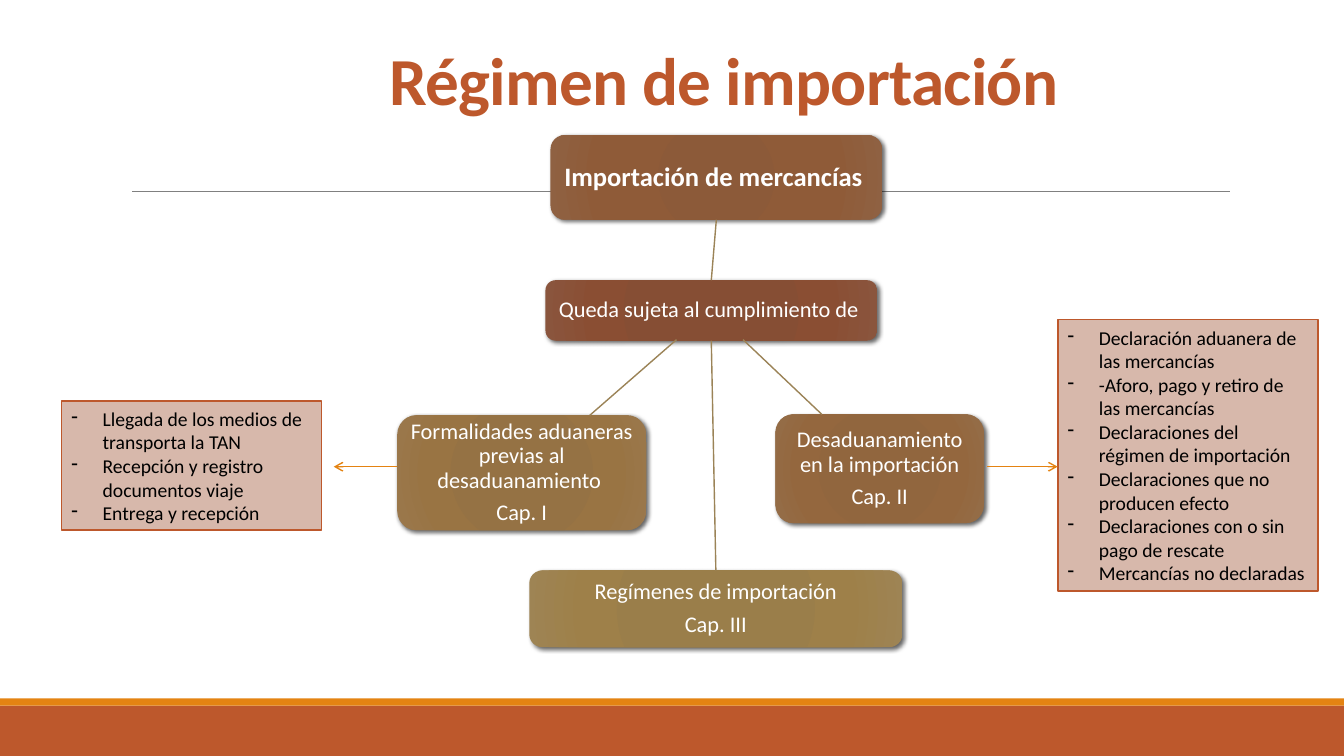
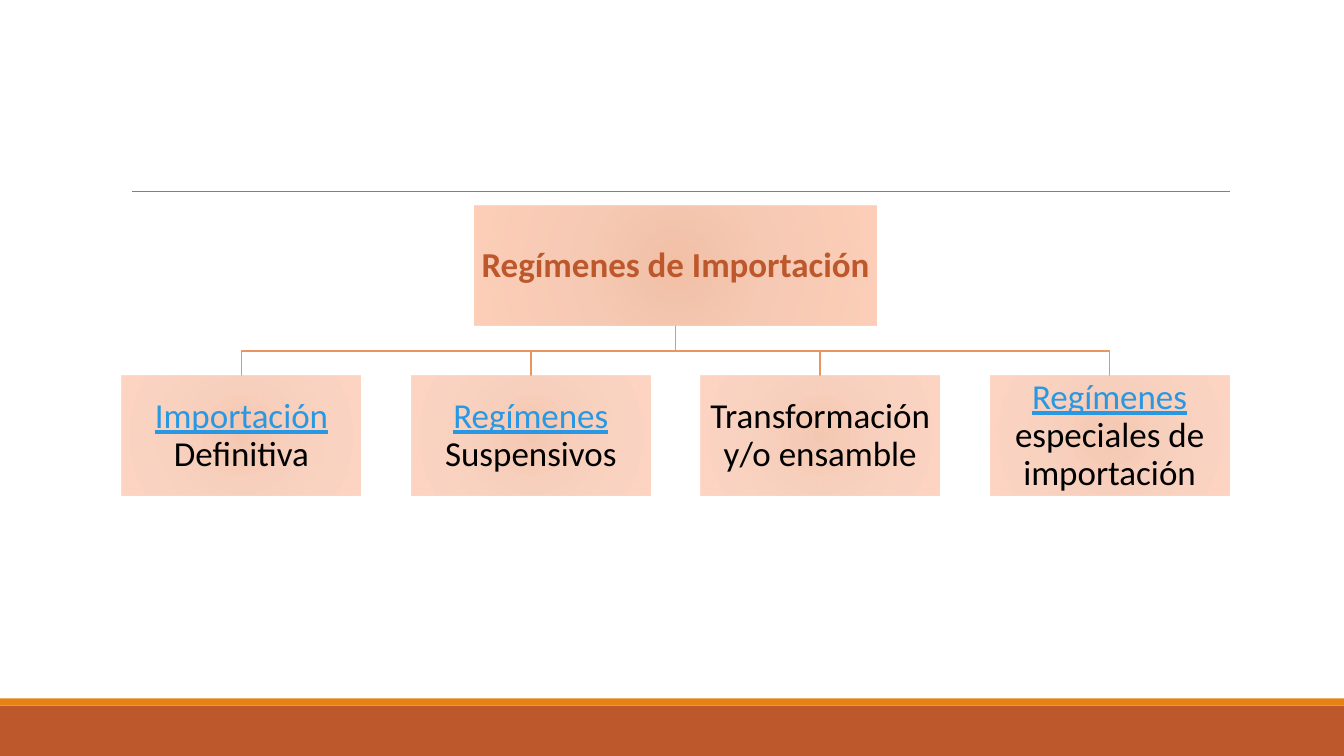
import pptx
import pptx.util
import pptx.oxml
import pptx.oxml.ns
import pptx.dml.color
import pptx.enum.shapes
import pptx.enum.text

Inches = pptx.util.Inches
Pt = pptx.util.Pt
SHAPE = pptx.enum.shapes.MSO_SHAPE
ALIGN = pptx.enum.text.PP_ALIGN
ANCHOR = pptx.enum.text.MSO_ANCHOR
DRAWING_NS = pptx.oxml.ns.nsdecls("a")

FONT = "Calibri"
COLORS = {
    "rust": "BD582C",
    "orange": "E48312",
    "rule": "808080",
    "branch": "9B8357",
    "tree": "E7965F",
    "note": "D7B8AB",
    "link": "2998E3",
    "white": "FFFFFF",
    "black": "000000",
}
# Gradient stops: (position in percent, colour)
STEP_POSITIONS = (0, 34, 70, 100)
STEP_GRADIENTS = {
    "goods": ("8C5937", "8C5A39", "8F5B38", "8F6142"),
    "subject": ("874C32", "864E34", "8A4E33", "8A553D"),
    "clearance": ("91653C", "91663E", "94673E", "946D48"),
    "formalities": ("957142", "957244", "997443", "9A784D"),
    "regimes": ("9A7D48", "9A7E4A", "9E8049", "9E8454"),
}
PEACH_STOPS = ((0, "F0B191"), (45, "F5BEA4"), (100, "FDC3A8"))


def rgb(name):
    return pptx.dml.color.RGBColor.from_string(COLORS[name])


# Text: each paragraph is a string or a list of (text, run format) pairs
def write(shape, paragraphs, size=16, color="white", bold=False,
          align=ALIGN.CENTER, anchor=ANCHOR.MIDDLE, inset=(0.1, 0.05),
          line_spacing=None, gap=0, bullet=None, tracking=None):
    frame = shape.text_frame
    frame.word_wrap = True
    frame.vertical_anchor = anchor
    frame.margin_left = frame.margin_right = Inches(inset[0])
    frame.margin_top = frame.margin_bottom = Inches(inset[1])
    for index, content in enumerate(paragraphs):
        paragraph = frame.add_paragraph() if index else frame.paragraphs[0]
        paragraph.alignment = align
        paragraph.line_spacing = line_spacing
        if index and gap:
            paragraph.space_before = Pt(gap)
        if bullet:
            add_bullet(paragraph, bullet)
        runs = [(content, {})] if isinstance(content, str) else content
        for words, style in runs:
            run = paragraph.add_run()
            run.text = words
            run.font.name = FONT
            run.font.size = Pt(size)
            run.font.bold = bold
            run.font.underline = style.get("underline", False)
            run.font.color.rgb = rgb(style.get("color", color))
            if tracking:
                run._r.get_or_add_rPr().set("spc", str(int(tracking * 100)))


def add_bullet(paragraph, mark, indent=0.31):
    properties = paragraph._p.get_or_add_pPr()
    properties.set("marL", str(Inches(indent)))
    properties.set("indent", str(-Inches(indent)))
    properties.append(pptx.oxml.parse_xml(
        f'<a:buChar {DRAWING_NS} char="{mark}"/>'))


# Shapes
def add_box(slide, at, fill=None, line=None, kind=SHAPE.RECTANGLE):
    box = slide.shapes.add_shape(kind, *map(Inches, at))
    box.shadow.inherit = False
    if fill:
        box.fill.solid()
        box.fill.fore_color.rgb = rgb(fill)
    else:
        box.fill.background()
    if line:
        box.line.color.rgb = rgb(line)
        box.line.width = Pt(1.25)
    else:
        box.line.fill.background()
    return box


def set_radial_fill(box, stops, opacity=100):
    stop_xml = "".join(
        f'<a:gs pos="{position * 1000}"><a:srgbClr val="{color}">'
        f'<a:alpha val="{opacity * 1000}"/></a:srgbClr></a:gs>'
        for position, color in stops)
    gradient = pptx.oxml.parse_xml(
        f'<a:gradFill {DRAWING_NS} rotWithShape="1"><a:gsLst>{stop_xml}</a:gsLst>'
        '<a:path path="circle"><a:fillToRect l="100000" t="100000" r="100000" '
        'b="100000"/></a:path></a:gradFill>')
    properties = box._element.spPr
    properties.replace(properties.find(pptx.oxml.ns.qn("a:noFill")), gradient)


def set_drop_shadow(box):
    effects = box._element.spPr.find(pptx.oxml.ns.qn("a:effectLst"))
    effects.append(pptx.oxml.parse_xml(
        f'<a:outerShdw {DRAWING_NS} blurRad="{Pt(3)}" dist="{Pt(2)}" '
        'dir="2700000" algn="ctr" rotWithShape="0"><a:srgbClr val="000000">'
        '<a:alpha val="60000"/></a:srgbClr></a:outerShdw>'))


def add_step(slide, at, gradient, paragraphs, **style):
    step = add_box(slide, at, kind=SHAPE.ROUNDED_RECTANGLE)
    set_radial_fill(step, zip(STEP_POSITIONS, STEP_GRADIENTS[gradient]))
    set_drop_shadow(step)
    write(step, paragraphs, inset=(0.04, 0.04), line_spacing=0.9, gap=5.6, **style)
    return step


def add_note(slide, at, items):
    note = add_box(slide, at, fill="note", line="rust")
    write(note, items, size=14, color="black", align=ALIGN.LEFT, bullet="-")


def add_regime(slide, at, runs, opacity, **style):
    regime = add_box(slide, at)
    set_radial_fill(regime, PEACH_STOPS, opacity)
    write(regime, [runs], size=25, inset=(0.02, 0.02), line_spacing=0.9, **style)


# Lines
def add_line(slide, start, end, color, width, arrow=False, source=None, target=None):
    line = slide.shapes.add_connector(
        pptx.enum.shapes.MSO_CONNECTOR.STRAIGHT, *map(Inches, (*start, *end)))
    if source:
        line.begin_connect(source, 2)
    if target:
        line.end_connect(target, 0)
    line.line.color.rgb = rgb(color)
    line.line.width = Pt(width)
    if arrow:
        line.line._get_or_add_ln().append(
            pptx.oxml.parse_xml(f'<a:tailEnd {DRAWING_NS} type="arrow"/>'))
    line._element.spPr.append(pptx.oxml.parse_xml(f"<a:effectLst {DRAWING_NS}/>"))


def add_elbow(slide, start, end):
    (start_x, start_y), (end_x, end_y) = start, end
    bend_y = (start_y + end_y) / 2
    outline = slide.shapes.build_freeform(
        Inches(start_x), Inches(start_y))
    corners = ((start_x, bend_y), (end_x, bend_y), (end_x, end_y))
    outline.add_line_segments(
        [(Inches(x), Inches(y)) for x, y in corners], close=False)
    elbow = outline.convert_to_shape()
    elbow.shadow.inherit = False
    elbow.fill.background()
    elbow.line.color.rgb = rgb("tree")
    elbow.line.width = Pt(1.25)


# Shared frame: footer bands and title rule
def add_framed_slide(deck):
    slide = deck.slides.add_slide(deck.slide_layouts[6])
    add_box(slide, (0, 7, 13.33, 0.5), fill="rust")
    add_box(slide, (0, 6.93, 13.33, 0.07), fill="orange")
    add_line(slide, (1.31, 1.9), (12.2, 1.9), "rule", 0.5)
    return slide


def add_title(slide, text):
    title = slide.shapes.add_textbox(*map(Inches, (1.68, 0.23, 11, 1)))
    write(title, [text], size=48, color="rust", bold=True,
          anchor=ANCHOR.BOTTOM, line_spacing=0.85, tracking=-0.5)


def build_import_process(deck):
    slide = add_framed_slide(deck)
    add_title(slide, "Régimen de importación")

    # Steps
    goods = add_step(slide, (5.46, 1.34, 3.29, 0.84), "goods",
                     ["Importación de mercancías "], size=19, bold=True)
    subject = add_step(slide, (5.41, 2.78, 3.29, 0.6), "subject",
                       ["Queda sujeta al cumplimiento de "])
    add_step(slide, (7.69, 4.11, 2.07, 1.08), "clearance",
             ["Desaduanamiento en la importación", "Cap. II"])
    add_step(slide, (3.94, 4.12, 2.47, 1.14), "formalities",
             ["Formalidades aduaneras previas al desaduanamiento ", "Cap. I"])
    regimes = add_step(slide, (5.25, 5.66, 3.7, 0.76), "regimes",
                       ["Regímenes de importación", "Cap. III"])

    # Branches
    add_line(slide, (7.1, 2.18), (7.06, 2.78), "branch", 1,
             source=goods, target=subject)
    add_line(slide, (7.06, 3.38), (7.1, 5.66), "branch", 1,
             source=subject, target=regimes)
    add_line(slide, (7.37, 3.37), (8.15, 4.11), "branch", 1)
    add_line(slide, (6.71, 3.37), (5.85, 4.12), "branch", 1)

    # Side notes
    add_note(slide, (0.61, 3.98, 2.58, 1.28), [
        "Llegada de los medios de transporta la TAN",
        "Recepción y registro documentos viaje",
        "Entrega y recepción",
    ])
    add_note(slide, (10.49, 3.17, 2.58, 2.69), [
        "Declaración aduanera de las mercancías",
        "-Aforo, pago y retiro de las mercancías",
        "Declaraciones del régimen de importación",
        "Declaraciones que no producen efecto",
        "Declaraciones con o sin pago de rescate",
        "Mercancías no declaradas",
    ])
    add_line(slide, (9.79, 4.63), (10.49, 4.63), "orange", 1, arrow=True)
    add_line(slide, (3.94, 4.63), (3.31, 4.63), "orange", 1, arrow=True)


def build_regime_tree(deck):
    slide = add_framed_slide(deck)
    link = {"color": "link", "underline": True}
    regimes = [
        [("Importación", link), (" Definitiva", {})],
        [("Regímenes", link), (" Suspensivos", {})],
        "Transformación y/o ensamble",
        [("Regímenes", link), (" especiales de importación", {})],
    ]
    left, top, width, height, pitch = 1.21, 3.73, 2.37, 1.19, 2.87
    root_left, root_top, root_width = 4.71, 2.04, 3.98
    trunk = (root_left + root_width / 2, root_top + height)

    # Root
    add_regime(slide, (root_left, root_top, root_width, height),
               "Regímenes de Importación", opacity=80, color="rust", bold=True)

    # Regimes below it
    for index, runs in enumerate(regimes):
        regime_left = left + pitch * index
        add_elbow(slide, trunk, (regime_left + width / 2, top))
        add_regime(slide, (regime_left, top, width, height), runs,
                   opacity=70, color="black")


def main():
    deck = pptx.Presentation()
    deck.slide_width, deck.slide_height = Inches(13.33), Inches(7.5)
    build_import_process(deck)
    build_regime_tree(deck)
    deck.save("out.pptx")


if __name__ == "__main__":
    main()
